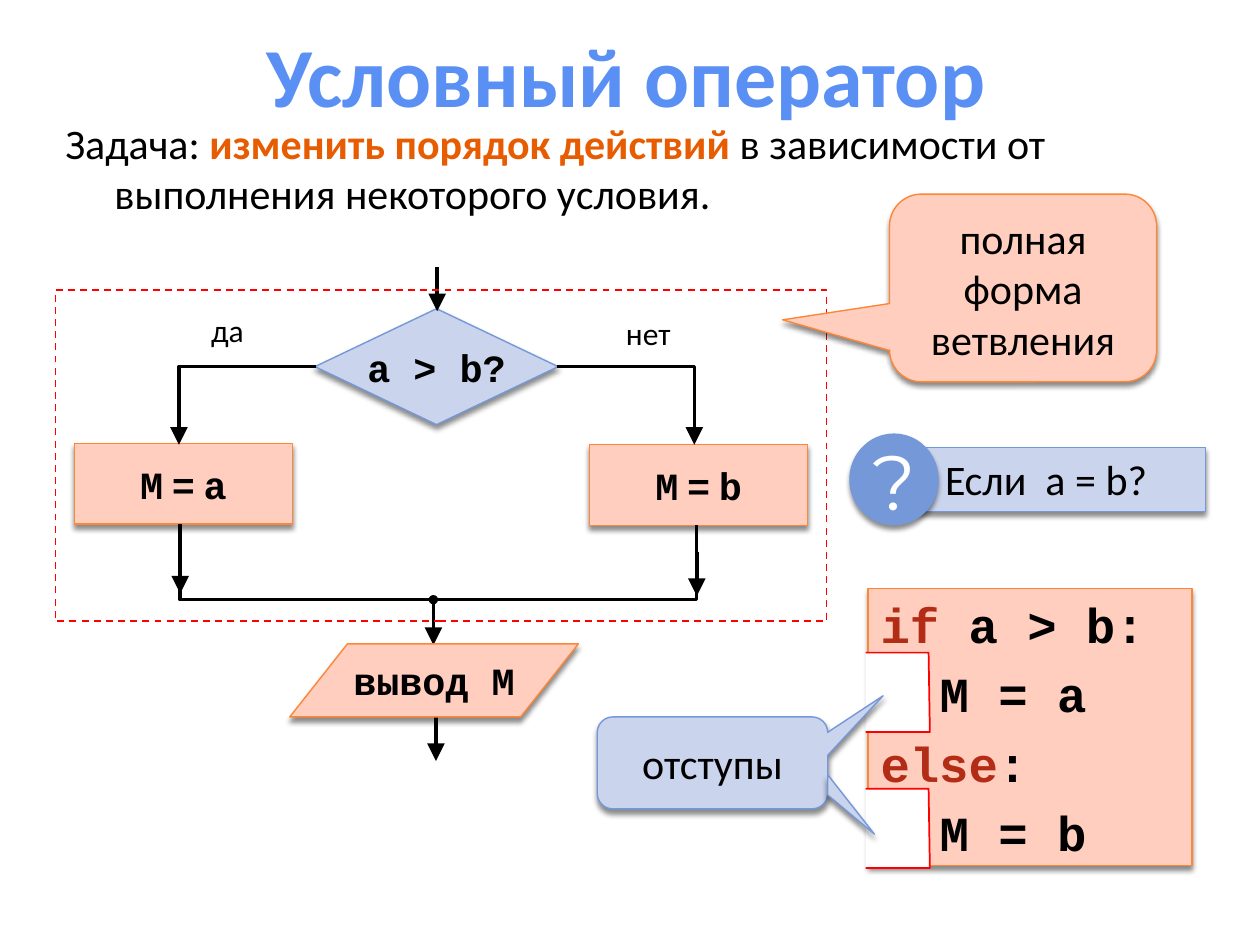
from dataclasses import dataclass
from lxml.etree import SubElement
from pptx import Presentation
from pptx.dml.color import RGBColor
from pptx.enum.dml import MSO_LINE
from pptx.enum.shapes import MSO_CONNECTOR, MSO_SHAPE
from pptx.enum.text import MSO_ANCHOR, PP_ALIGN
from pptx.oxml.ns import qn
from pptx.slide import Slide
from pptx.util import Inches, Pt

BODY, CODE = "Calibri", "Courier New"
BLACK, WHITE, RED = "000000", "FFFFFF", "FF0000"
PEACH, ORANGE = "FFCEBF", "FE8637"
PALE_BLUE, BLUE = "CAD4ED", "7598D9"
KEYWORD = "B32C16"


def color(hex_value):
    return RGBColor.from_string(hex_value)


def write(frame, paragraphs, size=24, font=BODY, ink=BLACK, bold=False,
          align=PP_ALIGN.CENTER, anchor=MSO_ANCHOR.MIDDLE, wrap=True,
          before=0, indents=None, left=0.1):
    frame.word_wrap = wrap
    frame.vertical_anchor = anchor
    frame.margin_left = Inches(left)
    for index, pieces in enumerate(paragraphs):
        paragraph = frame.add_paragraph() if index else frame.paragraphs[0]
        paragraph.alignment = align
        paragraph.space_before = Pt(before)
        if indents:
            margin, first = indents[index]
            properties = paragraph._p.get_or_add_pPr()
            properties.set("marL", str(Inches(margin)))
            properties.set("indent", str(Inches(first)))
        for text, changes in pieces:
            run = paragraph.add_run()
            run.text = text
            run.font.size = Pt(size)
            run.font.name = changes.get("font", font)
            run.font.bold = changes.get("bold", bold)
            run.font.color.rgb = color(changes.get("ink", ink))


def plain(text):
    return [[(text, {})]]


def assignment(value):
    gap = (" ", {"font": BODY})
    return [[("M", {}), gap, ("=", {}), gap, (value, {})]]


@dataclass
class Diagram:
    slide: Slide
    line_width: float = 2
    border_width: float = 0.79

    def label(self, box, paragraphs, **style):
        text_box = self.slide.shapes.add_textbox(*map(Inches, box))
        write(text_box.text_frame, paragraphs, **style)

    def paint(self, shape, fill, border, width, shadow):
        if fill:
            shape.fill.solid()
            shape.fill.fore_color.rgb = color(fill)
        else:
            shape.fill.background()
        if border:
            shape.line.color.rgb = color(border)
            shape.line.width = Pt(width)
        else:
            shape.line.fill.background()
        shape.shadow.inherit = False
        if shadow:
            effects = shape._element.spPr.find(qn("a:effectLst"))
            outer = SubElement(effects, qn("a:outerShdw"), blurRad=str(Pt(3)),
                               dist=str(Pt(2.4)), dir="5400000", rotWithShape="0")
            ink = SubElement(outer, qn("a:srgbClr"), val=BLACK)
            SubElement(ink, qn("a:alpha"), val="45000")

    def block(self, kind, box, fill, border, paragraphs=None, width=None,
              shadow=True, adjust=(), **style):
        shape = self.slide.shapes.add_shape(kind, *map(Inches, box))
        for index, value in enumerate(adjust):
            shape.adjustments[index] = value
        self.paint(shape, fill, border, width or self.border_width, shadow)
        if paragraphs:
            write(shape.text_frame, paragraphs, **style)
        return shape

    def outline(self, points, fill=None, border=BLACK, width=None,
                closed=False, shadow=False, arrow=False):
        corners = [(Inches(x), Inches(y)) for x, y in points]
        builder = self.slide.shapes.build_freeform(*corners[0])
        builder.add_line_segments(corners[1:], close=closed)
        shape = builder.convert_to_shape()
        self.paint(shape, fill, border, width or self.line_width, shadow)
        if arrow:
            self.add_head(shape)

    def add_head(self, shape):
        SubElement(shape.line._get_or_add_ln(), qn("a:tailEnd"),
                   type="triangle", w="lg", len="lg")

    def arrow_down(self, x, top, length=0.35):
        arrow = self.slide.shapes.add_connector(
            MSO_CONNECTOR.STRAIGHT, *map(Inches, (x, top, x, top + length)))
        arrow.line.color.rgb = color(BLACK)
        arrow.line.width = Pt(self.line_width)
        self.add_head(arrow)
        SubElement(arrow._element.spPr, qn("a:effectLst"))


def main():
    deck = Presentation()
    deck.slide_width, deck.slide_height = Inches(10), Inches(7.5)
    diagram = Diagram(deck.slides.add_slide(deck.slide_layouts[6]))
    operation = {"size": 22, "font": CODE, "bold": True, "wrap": False}

    diagram.label((0.39, 0.16, 9.16, 0.85), plain("Условный оператор"),
                  size=48, ink="5A90F4", bold=True)
    task = [[("Задача: ", {}),
             ("изменить порядок действий ", {"ink": "E75C01", "bold": True}),
             ("в зависимости от выполнения некоторого условия.", {})]]
    diagram.label((0.42, 0.88, 9.25, 0.91), task, align=PP_ALIGN.LEFT,
                  anchor=MSO_ANCHOR.TOP, indents=[(0.39, -0.39)])

    diagram.block(MSO_SHAPE.RECTANGLE, (0.59, 3.52, 1.73, 0.64), PEACH, ORANGE,
                  assignment("a"), **operation)
    diagram.block(MSO_SHAPE.FLOWCHART_DECISION, (2.5, 2.45, 1.93, 0.92),
                  PALE_BLUE, BLUE, plain("a > b?"), **operation)
    diagram.block(MSO_SHAPE.RECTANGLE, (4.68, 3.53, 1.73, 0.64), PEACH, ORANGE,
                  assignment("b"), **operation)
    for start, end in ((4.42, 5.51), (2.51, 1.42)):
        diagram.outline([(start, 2.91), (end, 2.91), (end, 3.53)], arrow=True)
    diagram.outline([(1.43, 4.16), (1.43, 4.76), (5.53, 4.76), (5.53, 4.17)])
    for x, top in ((3.47, 2.12), (1.43, 4.36), (5.53, 4.38),
                   (3.44, 4.77), (3.46, 5.69)):
        diagram.arrow_down(x, top)
    diagram.block(MSO_SHAPE.OVAL, (3.41, 4.73, 0.06, 0.06), BLACK, BLACK,
                  width=1, shadow=False)
    for answer, left, top in (("да", 1.43, 2.42), ("нет", 4.77, 2.44)):
        diagram.label((left, top, 0.75, 0.4), plain(answer), size=18,
                      anchor=MSO_ANCHOR.TOP)
    diagram.block(MSO_SHAPE.FLOWCHART_DATA, (2.3, 5.11, 2.29, 0.58),
                  PEACH, ORANGE, plain("вывод M"), **operation)
    branching = diagram.block(MSO_SHAPE.RECTANGLE, (0.44, 2.3, 6.12, 2.63),
                              None, RED, width=1, shadow=False)
    branching.line.dash_style = MSO_LINE.DASH

    diagram.block(MSO_SHAPE.ROUNDED_RECTANGULAR_CALLOUT, (7.06, 1.54, 2.12, 1.49),
                  PEACH, ORANGE, plain("полная форма ветвления"),
                  adjust=(-0.9, 0.17, 0.17))
    diagram.block(MSO_SHAPE.RECTANGLE, (7.25, 3.55, 2.32, 0.51), PALE_BLUE, BLUE,
                  plain("Если  a = b?"), align=PP_ALIGN.LEFT,
                  anchor=MSO_ANCHOR.TOP, left=0.25)
    diagram.block(MSO_SHAPE.OVAL, (6.74, 3.44, 0.71, 0.73), BLUE, None, plain("?"),
                  size=44, font="Montserrat", ink=WHITE, wrap=False)

    keyword = {"ink": KEYWORD}
    program = [[("if", keyword), (" a > b:", {})], [("M = a", {})],
               [("else", keyword), (":", {})], [("M = b", {})]]
    diagram.block(MSO_SHAPE.RECTANGLE, (6.89, 4.67, 2.57, 2.2), PEACH, ORANGE,
                  program, size=28, font=CODE, bold=True, align=PP_ALIGN.LEFT,
                  anchor=MSO_ANCHOR.TOP, before=6, indents=[(0, 0), (0.47, 0)] * 2)
    for top in (5.18, 6.26):
        diagram.outline([(6.87, top), (7.37, top), (7.38, top + 0.63),
                         (6.87, top + 0.63)], WHITE, RED, 1)
    diagram.block(MSO_SHAPE.ROUNDED_RECTANGULAR_CALLOUT, (4.74, 5.69, 1.83, 0.73),
                  PALE_BLUE, BLUE, plain("отступы"), adjust=(0.74, -0.73, 0.17))
    diagram.outline([(6.57, 6.31), (6.94, 6.62), (6.57, 6.15)], PALE_BLUE, BLUE,
                    diagram.border_width, closed=True, shadow=True)
    deck.save("out.pptx")


if __name__ == "__main__":
    main()
